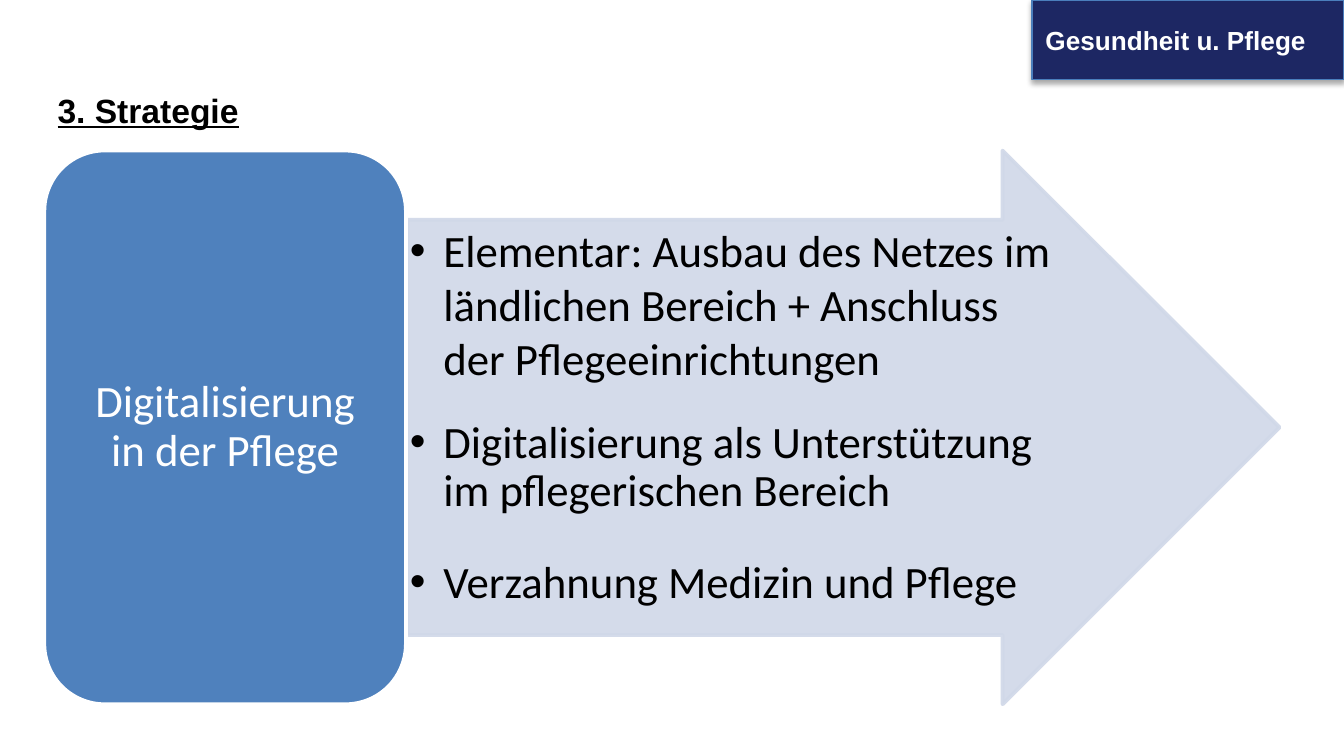
from pptx import Presentation
from pptx.dml.color import RGBColor
from pptx.enum.shapes import MSO_SHAPE
from pptx.enum.text import MSO_ANCHOR, PP_ALIGN
from pptx.oxml import parse_xml
from pptx.oxml.ns import nsdecls, qn
from pptx.util import Inches, Pt
from lxml.etree import SubElement

NAVY = RGBColor(0x1D, 0x27, 0x63)
EDGE = RGBColor(0x4B, 0x7E, 0xBC)
BLUE = RGBColor(0x4F, 0x81, 0xBD)
PALE = RGBColor(0xD0, 0xD8, 0xE8)
WHITE = RGBColor(0xFF, 0xFF, 0xFF)
BLACK = RGBColor(0, 0, 0)

GOALS = [
    ("Elementar: Ausbau des Netzes im ländlichen Bereich + Anschluss der Pflegeeinrichtungen", 1, 0),
    ("Digitalisierung als Unterstützung im pflegerischen Bereich", 0.9, 19),
    ("Verzahnung Medizin und Pflege", 0.9, 23),
]


def add_shape(s, kind, box, fill, line, width):
    sp = s.shapes.add_shape(kind, *map(Inches, box))
    sp.shadow.inherit = False
    sp.fill.solid()
    sp.fill.fore_color.rgb = fill
    sp.line.color.rgb = line
    sp.line.width = Pt(width)
    return sp


def set_alpha(sp, percent):
    for color in sp._element.spPr.iter(qn("a:srgbClr")):
        SubElement(color, qn("a:alpha")).set("val", str(percent * 1000))


def add_drop_shadow(sp):
    effects = sp._element.spPr.find(qn("a:effectLst"))
    effects.append(parse_xml(
        f'<a:outerShdw {nsdecls("a")} blurRad="{Pt(3.1)}" dist="{Pt(1.8)}" '
        'dir="5400000" rotWithShape="0"><a:srgbClr val="000000">'
        '<a:alpha val="35000"/></a:srgbClr></a:outerShdw>'))


def add_run(p, text, size, font, color, bold=False, underline=False):
    r = p.add_run()
    r.text = text
    r.font.size = Pt(size)
    r.font.name = font
    r.font.color.rgb = color
    r.font.bold = bold
    r.font.underline = underline


def add_text_box(s, box, inset=None):
    tf = s.shapes.add_textbox(*map(Inches, box)).text_frame
    tf.word_wrap = True
    if inset is not None:
        tf.margin_left = tf.margin_right = Inches(inset)
        tf.margin_top = tf.margin_bottom = Inches(inset)
    return tf


def add_bullet(p):
    pPr = p._p.get_or_add_pPr()
    pPr.set("marL", str(Inches(0.25)))
    pPr.set("indent", str(-Inches(0.25)))
    SubElement(pPr, qn("a:buFont")).set("typeface", "Arial")
    SubElement(pPr, qn("a:buChar")).set("char", "•")


def add_goals(s, box):
    tf = add_text_box(s, box, 0.02)
    for i, (text, spacing, gap) in enumerate(GOALS):
        p = tf.add_paragraph() if i else tf.paragraphs[0]
        add_bullet(p)
        p.line_spacing = spacing
        if gap:
            p.space_before = Pt(gap)
        add_run(p, text, 24, "Calibri", BLACK)


def add_topic(s, box):
    sp = add_shape(s, MSO_SHAPE.ROUNDED_RECTANGLE, box, BLUE, WHITE, 2)
    tf = sp.text_frame
    tf.word_wrap = True
    tf.vertical_anchor = MSO_ANCHOR.MIDDLE
    p = tf.paragraphs[0]
    p.alignment = PP_ALIGN.CENTER
    p.line_spacing = 0.9
    add_run(p, "Digitalisierung in der Pflege", 24, "Calibri", WHITE)


def main():
    prs = Presentation()
    prs.slide_width = Inches(10)
    prs.slide_height = prs.slide_width * 9 // 16
    s = prs.slides.add_slide(prs.slide_layouts[6])

    banner = add_shape(s, MSO_SHAPE.RECTANGLE, (7.68, 0, 2.32, 0.59), NAVY, EDGE, 0.75)
    add_drop_shadow(banner)
    tf = add_text_box(s, (7.68, 0.13, 2.21, 0.34))
    add_run(tf.paragraphs[0], "Gesundheit u. Pflege", 14, "Arial", WHITE, bold=True)
    tf = add_text_box(s, (0.33, 0.62, 7.06, 0.4))
    add_run(tf.paragraphs[0], "3. Strategie", 18, "Arial", BLACK, bold=True, underline=True)

    arrow = add_shape(s, MSO_SHAPE.RIGHT_ARROW, (3.03, 1.12, 6.49, 4.12), PALE, PALE, 2)
    arrow.adjustments[0] = 0.75
    arrow.adjustments[1] = 0.5
    set_alpha(arrow, 90)
    add_goals(s, (3.03, 1.64, 4.94, 3.09))
    add_topic(s, (0.33, 1.12, 2.69, 4.12))
    prs.save("out.pptx")


if __name__ == "__main__":
    main()
